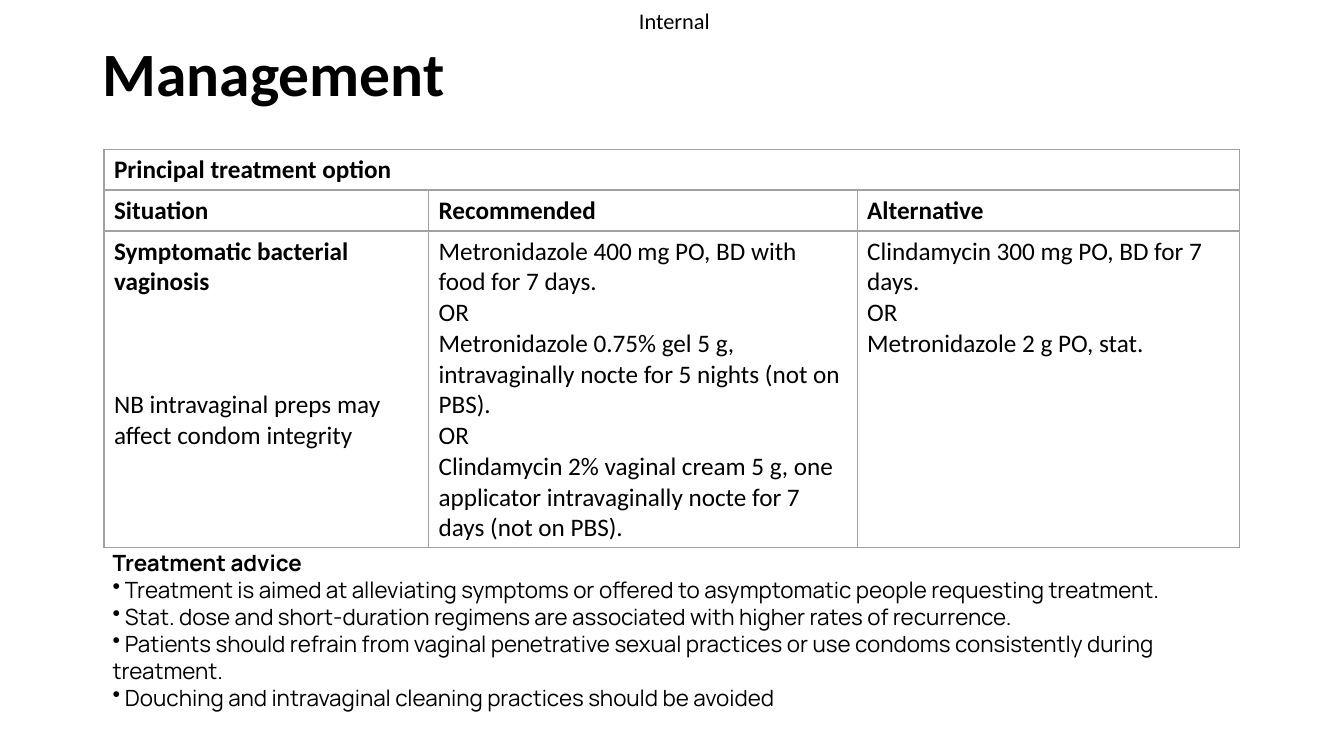
from lxml.etree import SubElement
from pptx import Presentation
from pptx.dml.color import RGBColor
from pptx.enum.text import MSO_ANCHOR, PP_ALIGN
from pptx.oxml.ns import qn
from pptx.util import Cm, Pt

BLACK = RGBColor(0x00, 0x00, 0x00)
BORDER_GREY = RGBColor(0xA1, 0xA1, 0xA1)
HEADING_FONT = "Calibri"
ADVICE_FONT = "Manrope"

COLUMN_WIDTHS = (8.18, 10.8, 9.64)
ROW_HEIGHTS = (1.03, 1.03, 7.98)
HEADINGS = ("Situation", "Recommended", "Alternative")
SITUATION = (
    "Symptomatic bacterial vaginosis",
    "NB intravaginal preps may affect condom integrity",
)
RECOMMENDED = (
    "Metronidazole 400 mg PO, BD with food for 7 days.",
    "OR",
    "Metronidazole 0.75% gel 5 g, intravaginally nocte for 5 nights (not on PBS).",
    "OR",
    "Clindamycin 2% vaginal cream 5 g, one applicator intravaginally nocte for 7 days (not on PBS).",
)
ALTERNATIVE = (
    "Clindamycin 300 mg PO, BD for 7 days.",
    "OR",
    "Metronidazole 2 g PO, stat.",
)
ADVICE = (
    "Treatment is aimed at alleviating symptoms or offered to asymptomatic people requesting treatment.",
    "Stat. dose and short-duration regimens are associated with higher rates of recurrence.",
    "Patients should refrain from vaginal penetrative sexual practices or use condoms consistently during treatment.",
    "Douching and intravaginal cleaning practices should be avoided",
)


def style_paragraph(paragraph, size, bold=False, name=HEADING_FONT):
    """Set the font of a whole paragraph."""
    font = paragraph.font
    font.name, font.size, font.bold = name, Pt(size), bold
    font.color.rgb = BLACK


def write_paragraphs(text_frame, lines, size, bold=False):
    """Write one paragraph per line and return the paragraphs."""
    text_frame.text = "\n".join(lines)
    for paragraph in text_frame.paragraphs:
        style_paragraph(paragraph, size, bold)
    return text_frame.paragraphs


def add_label(slide, left, top, width, height):
    """Add the classification label at the top of the slide."""
    text_frame = slide.shapes.add_textbox(left, top, width, height).text_frame
    text_frame.margin_left = text_frame.margin_right = 0
    text_frame.margin_top = text_frame.margin_bottom = 0
    text_frame.word_wrap = False
    paragraph = write_paragraphs(text_frame, ["Internal"], 16)[0]
    paragraph.alignment = PP_ALIGN.CENTER


def add_title(slide, left, top, width, height):
    """Add the slide title, centred vertically in its box."""
    text_frame = slide.shapes.add_textbox(left, top, width, height).text_frame
    text_frame.word_wrap = True
    text_frame.vertical_anchor = MSO_ANCHOR.MIDDLE
    paragraph = write_paragraphs(text_frame, ["Management"], 44, True)[0]
    paragraph.line_spacing = 0.9


def outline_cell(cell):
    """Draw thin grey borders around a cell and leave it unfilled."""
    properties = cell._tc.get_or_add_tcPr()
    for side in ("a:lnL", "a:lnR", "a:lnT", "a:lnB"):
        line = SubElement(properties, qn(side), w=str(Pt(1)))
        fill = SubElement(line, qn("a:solidFill"))
        SubElement(fill, qn("a:srgbClr"), val=str(BORDER_GREY))
    cell.fill.background()


def add_treatment_table(slide, left, top):
    """Add the table of treatment options at the given corner."""
    width, height = Cm(sum(COLUMN_WIDTHS)), Cm(sum(ROW_HEIGHTS))
    table = slide.shapes.add_table(
        len(ROW_HEIGHTS), len(COLUMN_WIDTHS), left, top, width, height
    ).table
    table.first_row = table.horz_banding = False
    for column, column_width in zip(table.columns, COLUMN_WIDTHS):
        column.width = Cm(column_width)
    for row, row_height in zip(table.rows, ROW_HEIGHTS):
        row.height = Cm(row_height)
    for cell in table.iter_cells():
        outline_cell(cell)

    table.cell(0, 0).merge(table.cell(0, 2))
    write_paragraphs(table.cell(0, 0).text_frame, ["Principal treatment option"], 18, True)
    for index, heading in enumerate(HEADINGS):
        write_paragraphs(table.cell(1, index).text_frame, [heading], 18, True)
    for index, lines in enumerate((SITUATION, RECOMMENDED, ALTERNATIVE)):
        write_paragraphs(table.cell(2, index).text_frame, lines, 18)
    situation, note = table.cell(2, 0).text_frame.paragraphs
    situation.font.bold = True
    note.space_before = Pt(66)


def add_advice(slide, left, top, width, height):
    """Add the treatment advice heading and its bullets."""
    text_frame = slide.shapes.add_textbox(left, top, width, height).text_frame
    text_frame.word_wrap = True
    heading = text_frame.paragraphs[0]
    heading.text = "Treatment advice"
    style_paragraph(heading, 16, True, ADVICE_FONT)
    for advice in ADVICE:
        paragraph = text_frame.add_paragraph()
        paragraph.text = f" {advice}"
        SubElement(paragraph._p.get_or_add_pPr(), qn("a:buChar"), char="•")
        style_paragraph(paragraph, 16, name=ADVICE_FONT)


def build_management_slide(presentation):
    """Add the management slide to the presentation."""
    slide = presentation.slides.add_slide(presentation.slide_layouts[6])
    add_label(slide, Cm(16.03), Cm(0.18), Cm(1.93), Cm(0.69))
    add_title(slide, Cm(2.34), Cm(0.1), Cm(29.21), Cm(3.68))
    add_treatment_table(slide, Cm(2.62), Cm(3.76))
    add_advice(slide, Cm(2.59), Cm(13.72), Cm(28.9), Cm(3.68))


def main():
    """Build and save the presentation."""
    presentation = Presentation()
    presentation.slide_width, presentation.slide_height = Cm(33.87), Cm(19.05)
    build_management_slide(presentation)
    presentation.save("out.pptx")


if __name__ == "__main__":
    main()
